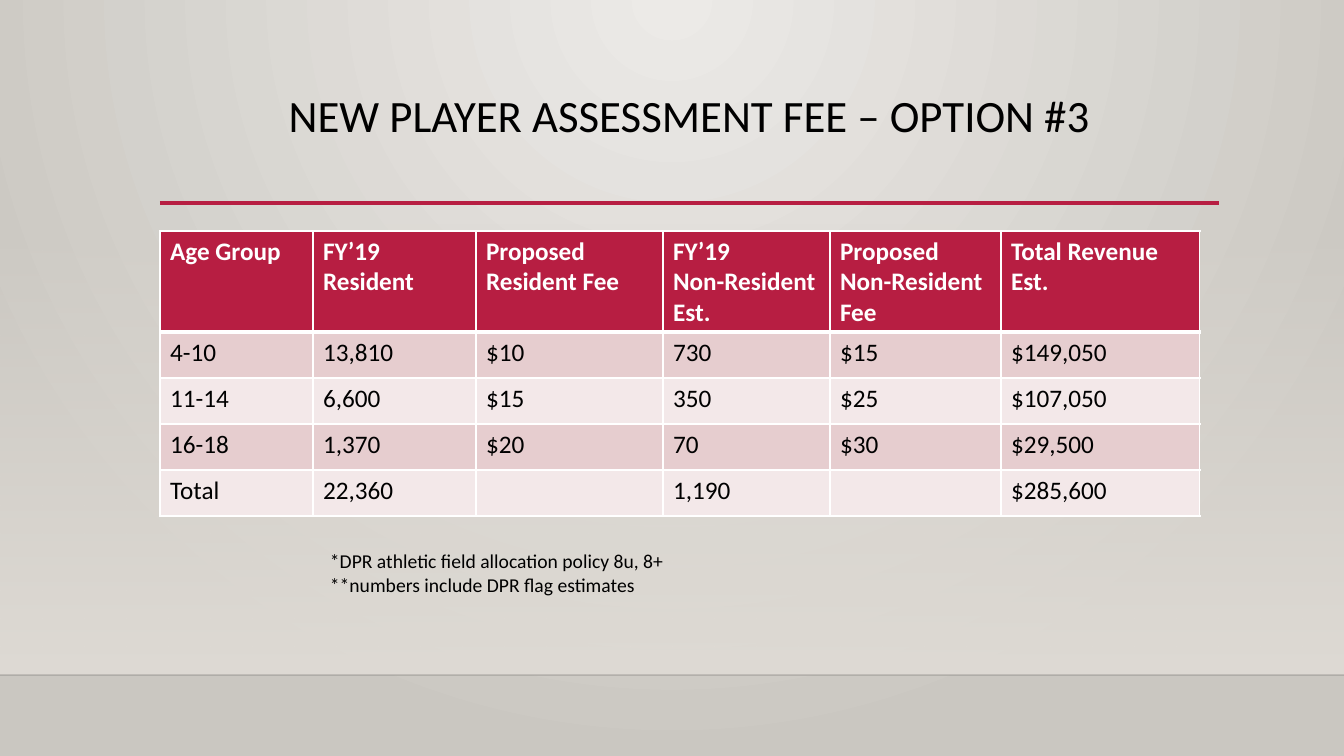
from lxml import etree
from pptx import Presentation
from pptx import util as u
from pptx.dml.color import RGBColor
from pptx.enum import shapes, text
from pptx.oxml import ns

PAGE_WIDTH, PAGE_HEIGHT = 1344, 756
SCALE = 12192000 / PAGE_WIDTH
FONT = "Calibri"

CRIMSON = RGBColor(0xB7, 0x1E, 0x42)
ROSE = RGBColor(0xE6, 0xCD, 0xCF)
BLUSH = RGBColor(0xF3, 0xE8, 0xE9)
WHITE = RGBColor(0xFF, 0xFF, 0xFF)
BLACK = RGBColor(0x00, 0x00, 0x00)
GLOW = RGBColor(0xEC, 0xEA, 0xE7)
STONE = RGBColor(0xCA, 0xC7, 0xC1)
WALL = RGBColor(0xDF, 0xDB, 0xD5)

COLUMN_WIDTHS = [153, 163, 187, 167, 171, 199]
HEADER_HEIGHT, ROW_HEIGHT = 101, 46
FEES = [
    ["Age Group", "FY’19 Resident", "Proposed Resident Fee", "FY’19\nNon-Resident Est.",
     "Proposed\nNon-Resident Fee", "Total Revenue Est."],
    ["4-10", "13,810", "$10", "730", "$15", "$149,050"],
    ["11-14", "6,600", "$15", "350", "$25", "$107,050"],
    ["16-18", "1,370", "$20", "70", "$30", "$29,500"],
    ["Total", "22,360", "", "1,190", "", "$285,600"],
]
NOTES = "*DPR athletic field allocation policy 8u, 8+\n**numbers include DPR flag estimates"


def px(length):
    return u.Emu(round(length * SCALE))


def add_child(parent, tag, **attributes):
    return etree.SubElement(parent, ns.qn(tag), attributes)


def set_opacity(color_format_parent, percent):
    color = next(color_format_parent.iter(ns.qn("a:srgbClr")))
    add_child(color, "a:alpha", val=str(percent * 1000))


def set_gradient(fill, first, last):
    fill.gradient()
    for stop, color in zip(fill.gradient_stops, (first, last)):
        stop.color.rgb = color


def style_text(frame, size, color, bold=False, align=None, spacing=None):
    frame.word_wrap = True
    for para in frame.paragraphs:
        para.font.name = FONT
        para.font.size = u.Pt(size)
        para.font.bold = bold
        para.font.color.rgb = color
        para.alignment = align
        para.line_spacing = spacing


def add_text(page, left, top, width, height, words, size, **style):
    box = page.shapes.add_textbox(px(left), px(top), px(width), px(height))
    box.text_frame.text = words
    style_text(box.text_frame, size, BLACK, **style)


def add_rule(page, left, top, width, color, weight):
    rule = page.shapes.add_connector(
        shapes.MSO_CONNECTOR.STRAIGHT, px(left), px(top), px(left + width), px(top))
    rule.line.color.rgb = color
    rule.line.width = u.Pt(weight)
    add_child(rule._element.spPr, "a:effectLst")
    return rule


def add_backdrop(page, left, top, width, height):
    set_gradient(page.background.fill, GLOW, STONE)
    gradient = next(page._element.iter(ns.qn("a:gradFill")))
    linear = gradient.find(ns.qn("a:lin"))
    circle = etree.Element(ns.qn("a:path"), {"path": "circle"})
    add_child(circle, "a:fillToRect", l="43000", t="0", r="43000", b="100000")
    gradient.replace(linear, circle)

    wall = page.shapes.add_shape(
        shapes.MSO_SHAPE.RECTANGLE, px(left), px(top), px(width), px(height))
    wall.shadow.inherit = False
    wall.line.fill.background()
    set_gradient(wall.fill, WALL, WALL)
    wall.fill.gradient_angle = 270
    set_opacity(wall._element.spPr, 0)

    edge = add_rule(page, left, top + height, width, BLACK, 1)
    set_opacity(edge._element.spPr, 20)


def add_heading(page, left, top, width, height):
    add_rule(page, left, top + height - 1, width, CRIMSON, 2.5)
    add_text(page, left, top, width, height, "NEW PLAYER ASSESSMENT FEE – OPTION #3", 32,
             align=text.PP_ALIGN.CENTER, spacing=0.9)


def set_borders(cell, top, bottom):
    properties = cell._tc.get_or_add_tcPr()
    for side, weight in (("L", 1), ("R", 1), ("T", top), ("B", bottom)):
        border = add_child(properties, f"a:ln{side}", w=str(u.Pt(weight)))
        add_child(add_child(border, "a:solidFill"), "a:srgbClr", val=str(WHITE))


def add_fee_table(page, left, top):
    height = HEADER_HEIGHT + ROW_HEIGHT * (len(FEES) - 1)
    table = page.shapes.add_table(
        len(FEES), len(COLUMN_WIDTHS), px(left), px(top),
        px(sum(COLUMN_WIDTHS)), px(height)).table
    for column, width in zip(table.columns, COLUMN_WIDTHS):
        column.width = px(width)
    for index, values in enumerate(FEES):
        header = index == 0
        table.rows[index].height = px(HEADER_HEIGHT if header else ROW_HEIGHT)
        color = CRIMSON if header else ROSE if index % 2 else BLUSH
        for cell, value in zip(table.rows[index].cells, values):
            cell.text = value
            style_text(cell.text_frame, 18, WHITE if header else BLACK, bold=header)
            set_borders(cell, 3 if index == 1 else 1, 3 if header else 1)
            cell.fill.solid()
            cell.fill.fore_color.rgb = color


def main():
    deck = Presentation()
    deck.slide_width, deck.slide_height = px(PAGE_WIDTH), px(PAGE_HEIGHT)
    page = deck.slides.add_slide(deck.slide_layouts[6])
    add_backdrop(page, 0, 223, PAGE_WIDTH, 452)
    add_heading(page, 160, 89, 1059, 115)
    add_fee_table(page, 160, 231)
    add_text(page, 320, 544, 899, 82, NOTES, 14)
    deck.save("out.pptx")


if __name__ == "__main__":
    main()
